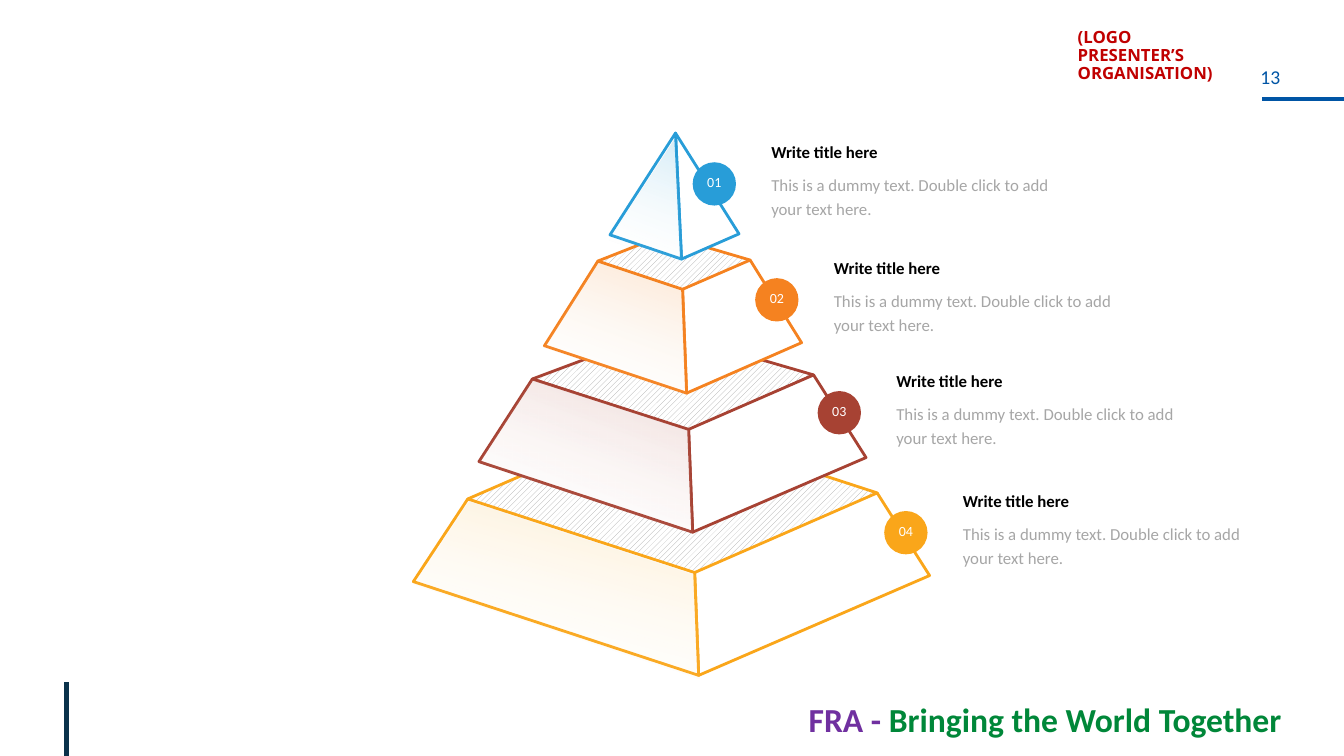
from lxml.etree import SubElement
from pptx import Presentation
from pptx.dml.color import RGBColor
from pptx.enum.dml import MSO_PATTERN
from pptx.enum.shapes import MSO_CONNECTOR, MSO_SHAPE
from pptx.enum.text import MSO_ANCHOR, PP_ALIGN
from pptx.oxml.ns import qn
from pptx.util import Inches, Pt


def paint(fill, color):
    fill.solid()
    fill.fore_color.rgb = RGBColor.from_string(color)


def outline(points):
    spots = [(Inches(x), Inches(y)) for x, y in points]
    pen = shapes.build_freeform(*spots[0])
    pen.add_line_segments(spots[1:], close=True)
    face = pen.convert_to_shape()
    face.shadow.inherit = False
    return face


deck = Presentation()
deck.slide_width, deck.slide_height = Inches(13.33), Inches(7.5)
slide = deck.slides.add_slide(deck.slide_layouts[6])
shapes = slide.shapes

footer = shapes.add_textbox(Inches(7.52), Inches(6.88), Inches(5.69), Inches(0.5))
footer.text_frame.word_wrap = False
motto = footer.text_frame.paragraphs[0]
motto.alignment = PP_ALIGN.CENTER
for words, color in [("FRA - ", "7030A0"), ("Bringing the World Together", "008739")]:
    run = motto.add_run()
    run.text = words
    run.font.name, run.font.size, run.font.bold = "Calibri", Pt(24), True
    paint(run.font.fill, color)

rules = [(12.52, 0.98, 13.33, 0.98, "0055A5"), (0.66, 6.77, 0.66, 7.5, "0A324B")]
for left, top, right, bottom, color in rules:
    rule = shapes.add_connector(MSO_CONNECTOR.STRAIGHT, Inches(left), Inches(top),
                                Inches(right), Inches(bottom))
    rule.line.width = Pt(3)
    paint(rule.line.fill, color)
    SubElement(rule._element.spPr, qn("a:effectLst"))

number = shapes.add_textbox(Inches(12), Inches(0.64), Inches(1.2), Inches(0.33))
frame = number.text_frame
frame.word_wrap = False
frame.margin_left = frame.margin_right = frame.margin_top = frame.margin_bottom = 0
page = frame.paragraphs[0]
page.text = "13"
page.alignment = PP_ALIGN.CENTER
page.font.name, page.font.size = "Calibri", Pt(14)
paint(page.font.fill, "0055A5")

# corners: left, front, right, then base left, base front, base right
tiers = [
    ("FAA61A", [(4.64, 4.95), (6.89, 5.68), (8.7, 4.89), (4.1, 5.77), (6.93, 6.7), (9.22, 5.71)],
     [(6.46, 4.16), (6.9, 5.85)], (0.01, 0.03), 105, (8.77, 5.07)),
    ("A74233", [(5.28, 3.76), (6.83, 4.26), (8.07, 3.72), (4.75, 4.58), (6.87, 5.28), (8.59, 4.54)],
     [(6.56, 3.28), (6.83, 4.27)], (0, 0.01), 110, (8.11, 3.88)),
    ("F58220", [(5.93, 2.59), (6.77, 2.87), (7.44, 2.58), (5.4, 3.43), (6.81, 3.9), (7.95, 3.4)],
     [(6.59, 2.33), (6.78, 2.98)], (-0.01, 0.01), 110, (7.49, 2.76)),
    ("289DD8", [(6.7, 1.32), (6.7, 1.32), (6.7, 1.32), (6.05, 2.33), (6.76, 2.57), (7.33, 2.32)],
     None, (0, 0.05), 110, (6.87, 1.61)),
]

for color, (left, front, right, low_left, low_front, low_right), lid, _, _, _ in tiers:
    faces = [[right, front, low_front, low_right], [front, low_front, low_left, left]]
    if lid:
        back, near = lid
        faces.insert(0, [left, back, right, near])
    for points in faces:
        face = outline(dict.fromkeys(points))
        paint(face.fill, "FFFFFF")
        if lid and points is faces[0]:
            face.fill.patterned()
            face.fill.pattern = MSO_PATTERN.WIDE_UPWARD_DIAGONAL
            face.fill.fore_color.rgb = RGBColor.from_string("A6A6A6")
            face.fill.back_color.rgb = RGBColor.from_string("FFFFFF")
        face.line.width = Pt(2)
        paint(face.line.fill, color)
        SubElement(face.line._ln, qn("a:round"))

for count, (color, _, _, _, _, (x, y)) in enumerate(reversed(tiers), 1):
    badge = shapes.add_shape(MSO_SHAPE.OVAL, Inches(x), Inches(y), Inches(0.43), Inches(0.43))
    badge.shadow.inherit = False
    paint(badge.fill, color)
    badge.line.fill.background()
    frame = badge.text_frame
    frame.margin_left = frame.margin_right = frame.margin_top = frame.margin_bottom = 0
    frame.vertical_anchor = MSO_ANCHOR.MIDDLE
    label = frame.paragraphs[0]
    label.text = f"{count:02}"
    label.alignment, label.line_spacing = PP_ALIGN.CENTER, 0.8
    label.font.name, label.font.size = "Calibri", Pt(10)
    paint(label.font.fill, "FFFFFF")

    note = shapes.add_textbox(Inches(x + 0.78), Inches(y - 0.29), Inches(2.96), Inches(0.95))
    frame = note.text_frame
    frame.word_wrap = True
    frame.margin_left = frame.margin_right = 0
    frame.text = "Write title here\nThis is a dummy text. Double click to add your text here."
    head, body = frame.paragraphs
    body.space_before = Pt(6)
    for para, ink in [(head, "000000"), (body, "A6A6A6")]:
        para.line_spacing = 1.2
        para.font.name, para.font.size = "Calibri", Pt(12)
        para.font.bold = para is head
        paint(para.font.fill, ink)

for color, (left, front, _, low_left, low_front, _), _, (dx, dy), angle, _ in reversed(tiers):
    points = dict.fromkeys([front, low_front, low_left, left])
    wash = outline([(x + dx, y + dy) for x, y in points])
    wash.line.fill.background()
    wash.fill.gradient()
    wash.fill.gradient_angle = 360 - angle
    shades = [(color, 0, "20000"), ("FFFFFF", 0.99, "0")]
    for stop, (shade, place, _) in zip(wash.fill.gradient_stops, shades):
        stop.color.rgb = RGBColor.from_string(shade)
        stop.position = place
    for tone, (_, _, alpha) in zip(wash._element.spPr.iter(qn("a:srgbClr")), shades):
        SubElement(tone, qn("a:alpha"), val=alpha)

logo = shapes.add_textbox(Inches(10.59), Inches(0.24), Inches(1.59), Inches(1.01))
logo.text_frame.word_wrap = True
owner = logo.text_frame.paragraphs[0]
owner.text = "(LOGO PRESENTER’S ORGANISATION)"
owner.line_spacing = 0.9
owner.font.name, owner.font.size, owner.font.bold = "Open Sans", Pt(12), True
paint(owner.font.fill, "C00000")

deck.save("out.pptx")
